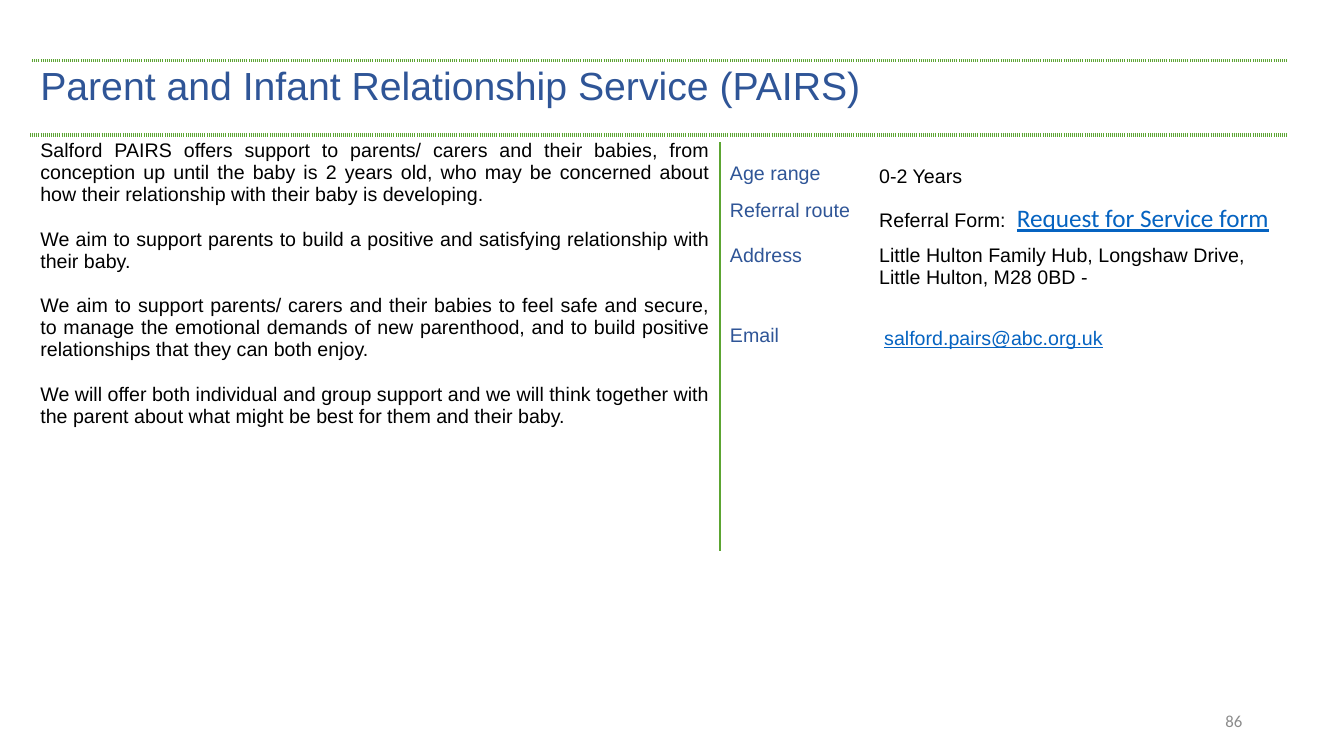
from dataclasses import dataclass

from lxml.etree import SubElement
from pptx import Presentation
from pptx.dml.color import RGBColor as Color
from pptx.enum.shapes import MSO_CONNECTOR as Connector
from pptx.enum.text import MSO_ANCHOR as Anchor, PP_ALIGN as Align
from pptx.oxml import parse_xml
from pptx.oxml.ns import nsdecls, qn
from pptx.util import Inches, Pt


@dataclass(frozen=True)
class Theme:
    """Colours, fonts and type sizes of the slide."""
    heading: str = "2F5597"
    body: str = "000000"
    link: str = "0563C1"
    rule: str = "5CA532"
    grid: str = "FFFFFF"
    muted: str = "8C8C8C"
    font: str = "Arial"
    alt_font: str = "Calibri"
    title_size: int = 28
    body_size: int = 14
    form_size: int = 18
    number_size: int = 12


THEME = Theme()
TITLE = "Parent and Infant Relationship Service (PAIRS)"
ABOUT = [
    "Salford PAIRS offers support to parents/ carers and their babies, from conception up "
    "until the baby is 2 years old, who may be concerned about how their relationship with "
    "their baby is developing.",
    "We aim to support parents to build a positive and satisfying relationship with their baby.",
    "We aim to support parents/ carers and their babies to feel safe and secure, to manage the "
    "emotional demands of new parenthood, and to build positive relationships that they can "
    "both enjoy.",
    "We will offer both individual and group support and we will think together with the "
    "parent about what might be best for them and their baby.",
]
COLUMNS = [6.84, 1.48, 4.15]
ROWS = [0.74, 0.57, 0.45, 0.79, 0.5, 0.51, 0.51]


def add_span(para, text, color, size=THEME.body_size, font=THEME.font, underline=False):
    """Append one formatted run to a paragraph."""
    span = para.add_run()
    span.text = text
    span.font.name = font
    span.font.size = Pt(size)
    span.font.color.rgb = Color.from_string(color)
    span.font.underline = underline


def set_borders(cell, row):
    """Give a cell white edges, and dotted green ones around the title row."""
    dotted = {0: ("T", "B"), 1: ("T",)}.get(row, ())
    properties = cell._tc.get_or_add_tcPr()
    for index, side in enumerate("LRTB"):
        color, width, dash = ((THEME.rule, 3, "sysDot") if side in dotted
                              else (THEME.grid, 0.25, "solid"))
        properties.insert(index, parse_xml(
            f'<a:ln{side} {nsdecls("a")} w="{Pt(width)}"><a:solidFill>'
            f'<a:srgbClr val="{color}"/></a:solidFill><a:prstDash val="{dash}"/></a:ln{side}>'))


def add_grid(page, left, top):
    """Place the empty bordered table and return it."""
    table = page.shapes.add_table(
        len(ROWS), len(COLUMNS), Inches(left), Inches(top),
        Inches(sum(COLUMNS)), Inches(sum(ROWS))).table
    table.first_row = table.horz_banding = False
    for column, width in zip(table.columns, COLUMNS):
        column.width = Inches(width)
    for index, (row, height) in enumerate(zip(table.rows, ROWS)):
        row.height = Inches(height)
        for cell in row.cells:
            cell.fill.background()
            set_borders(cell, index)
    table.cell(0, 0).merge(table.cell(0, 2))
    table.cell(1, 0).merge(table.cell(len(ROWS) - 1, 0))
    return table


def fill_about(cell):
    """Write the justified description of the service."""
    for index, text in enumerate(ABOUT):
        para = cell.text_frame.paragraphs[0] if index == 0 else cell.text_frame.add_paragraph()
        para.alignment = Align.JUSTIFY
        para.space_after = Pt(16 if index < len(ABOUT) - 1 else 0)
        add_span(para, text, THEME.body)


def fill_details(table):
    """Write the labels and values of the contact details."""
    form = dict(size=THEME.form_size, font=THEME.alt_font, underline=True)
    details = [
        ("Age range", 1.15, [("0-2 Years", THEME.body, {})]),
        ("Referral route", 1.15, [("Referral Form:  ", THEME.body, {}),
                                  ("Request for Service form", THEME.link, form)]),
        ("Address", 1, [("Little Hulton Family Hub, Longshaw Drive, Little Hulton, M28 0BD -",
                         THEME.body, {})]),
        ("Email", 1.15, [("salford.pairs@abc.org.uk", THEME.link, dict(underline=True))]),
    ]
    for row, (label, spacing, spans) in enumerate(details, 1):
        add_span(table.cell(row, 1).text_frame.paragraphs[0], label, THEME.heading)
        para = table.cell(row, 2).text_frame.paragraphs[0]
        para.line_spacing = spacing
        for text, color, style in spans:
            add_span(para, text, color, **style)
    for column in (1, 2):
        table.cell(1, column).margin_top = Inches(0.27)
    table.cell(4, 2).margin_left = Inches(0.15)


def add_service(page, left, top):
    """Build the service table and the divider between its two halves."""
    table = add_grid(page, left, top)
    title = table.cell(0, 0)
    title.vertical_anchor = Anchor.TOP
    add_span(title.text_frame.paragraphs[0], TITLE, THEME.heading, THEME.title_size)
    fill_about(table.cell(1, 0))
    fill_details(table)
    x = Inches(left + COLUMNS[0])
    start = top + ROWS[0] + 0.07
    divider = page.shapes.add_connector(
        Connector.STRAIGHT, x, Inches(start), x, Inches(start + 4.06))
    divider.line.color.rgb = Color.from_string(THEME.rule)
    divider.line.width = Pt(1.25)
    SubElement(divider._element.spPr, qn("a:effectLst"))


def add_page_number(page, left, top, width, height):
    """Write the page number at the right of its box."""
    box = page.shapes.add_textbox(Inches(left), Inches(top), Inches(width), Inches(height))
    box.text_frame.word_wrap = True
    box.text_frame.vertical_anchor = Anchor.MIDDLE
    para = box.text_frame.paragraphs[0]
    para.alignment = Align.RIGHT
    add_span(para, "86", THEME.muted, THEME.number_size, THEME.alt_font)


def main():
    """Create the deck and save it."""
    deck = Presentation()
    deck.slide_width, deck.slide_height = Inches(13.33), Inches(7.5)
    page = deck.slides.add_slide(deck.slide_layouts[6])
    add_page_number(page, 9.42, 6.95, 3, 0.4)
    add_service(page, 0.3, 0.6)
    deck.save("out.pptx")


if __name__ == "__main__":
    main()
